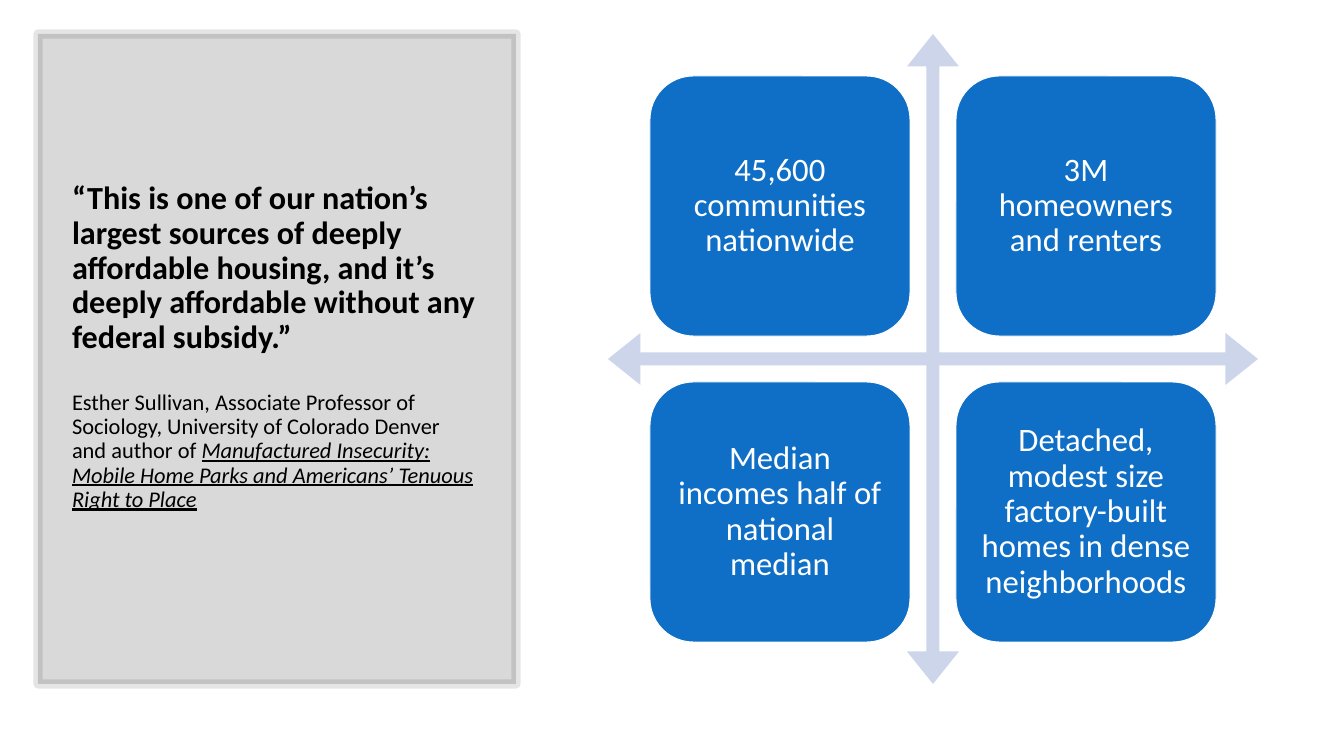
from lxml import etree
from pptx import Presentation
from pptx.dml.color import RGBColor
from pptx.enum.shapes import MSO_SHAPE as SHAPE
from pptx.enum.text import MSO_ANCHOR as ANCHOR, MSO_AUTO_SIZE as AUTO_SIZE, PP_ALIGN as ALIGN
from pptx.oxml.ns import qn
from pptx.util import Emu, Pt

SCALE = 914400 / 67.2
BLACK = RGBColor(0x00, 0x00, 0x00)
WHITE = RGBColor(0xFF, 0xFF, 0xFF)
BLUE = RGBColor(0x0F, 0x6F, 0xC6)
PALE_BLUE = RGBColor(0xCC, 0xD5, 0xEA)
FONT = "Calibri"

QUOTE = ("“This is one of our nation’s largest sources of deeply affordable housing, "
         "and it’s deeply affordable without any federal subsidy.”")
SPEAKER = ("Esther Sullivan, Associate Professor of Sociology, "
           "University of Colorado Denver and author of ")
BOOK = "Manufactured Insecurity: Mobile Home Parks and Americans’ Tenuous Right to Place"
FACTS = [
    "45,600 communities nationwide",
    "3M homeowners and renters",
    "Median incomes half of national median",
    "Detached, modest size factory-built homes in dense neighborhoods",
]
TILE_LEFT, TILE_TOP, TILE_SIZE, TILE_STEP = 650, 76, 260, 306


def px(n):
    return Emu(round(n * SCALE))


def set_alpha(fill, percent):
    """Make a solid fill partly transparent."""
    color = fill._xPr.find(qn("a:solidFill"))[0]
    etree.SubElement(color, qn("a:alpha")).set("val", str(percent * 1000))


def set_margins(tf, left, top, right, bottom):
    sides = {"left": left, "top": top, "right": right, "bottom": bottom}
    for side, n in sides.items():
        setattr(tf, f"margin_{side}", px(n))


def add_run(p, text, size, color, **styles):
    r = p.add_run()
    r.text = text
    r.font.color.rgb = color
    for name, value in {"name": FONT, "size": Pt(size), **styles}.items():
        setattr(r.font, name, value)


def add_shape(s, kind, box, color, line=None, line_width=1):
    sp = s.shapes.add_shape(kind, *map(px, box))
    sp.shadow.inherit = False
    sp.fill.solid()
    sp.fill.fore_color.rgb = color
    if line is None:
        sp.line.fill.background()
    else:
        sp.line.color.rgb = line
        sp.line.width = Pt(line_width)
    return sp


def add_quote_panel(s):
    sp = add_shape(s, SHAPE.RECTANGLE, (38, 34, 478, 650), BLACK, BLACK, 10)
    set_alpha(sp.fill, 15)
    set_alpha(sp.line.fill, 10)


def fill_title(s):
    title = s.shapes.title
    title.left, title.top, title.width, title.height = map(px, (65, 71, 419, 579))
    tf = title.text_frame
    tf.word_wrap = True
    tf.auto_size = AUTO_SIZE.NONE
    tf.vertical_anchor = ANCHOR.MIDDLE
    set_margins(tf, 7, 3, 7, 30)
    quote, source = tf.paragraphs[0], tf.add_paragraph()
    for p in (quote, source):
        p.alignment = ALIGN.LEFT
        p.line_spacing = 0.9
    source.space_before = Pt(38)
    add_run(quote, QUOTE, 34.5, BLACK, bold=True)
    add_run(source, SPEAKER, 24, BLACK, bold=False)
    add_run(source, BOOK, 24, BLACK, bold=False, italic=True, underline=True)


def add_cross_arrows(s):
    sp = add_shape(s, SHAPE.QUAD_ARROW, (608, 34, 650, 650), PALE_BLUE)
    for i, value in enumerate((0.02, 0.04, 0.05)):
        sp.adjustments[i] = value


def add_tile(s, row, col, text):
    box = (TILE_LEFT + col * TILE_STEP, TILE_TOP + row * TILE_STEP, TILE_SIZE, TILE_SIZE)
    tf = add_shape(s, SHAPE.ROUNDED_RECTANGLE, box, BLUE, WHITE).text_frame
    tf.word_wrap = True
    tf.vertical_anchor = ANCHOR.MIDDLE
    set_margins(tf, 10, 10, 10, 10)
    p = tf.paragraphs[0]
    p.alignment = ALIGN.CENTER
    p.line_spacing = 0.9
    add_run(p, text, 35, WHITE)


def main():
    prs = Presentation()
    prs.slide_width, prs.slide_height = px(1344), px(756)
    s = prs.slides.add_slide(prs.slide_layouts.get_by_name("Title Only"))
    add_quote_panel(s)
    # The panel goes behind the title
    s.shapes._spTree.append(s.shapes.title._element)
    fill_title(s)
    add_cross_arrows(s)
    for i, text in enumerate(FACTS):
        add_tile(s, *divmod(i, 2), text)
    prs.save("out.pptx")


if __name__ == "__main__":
    main()
